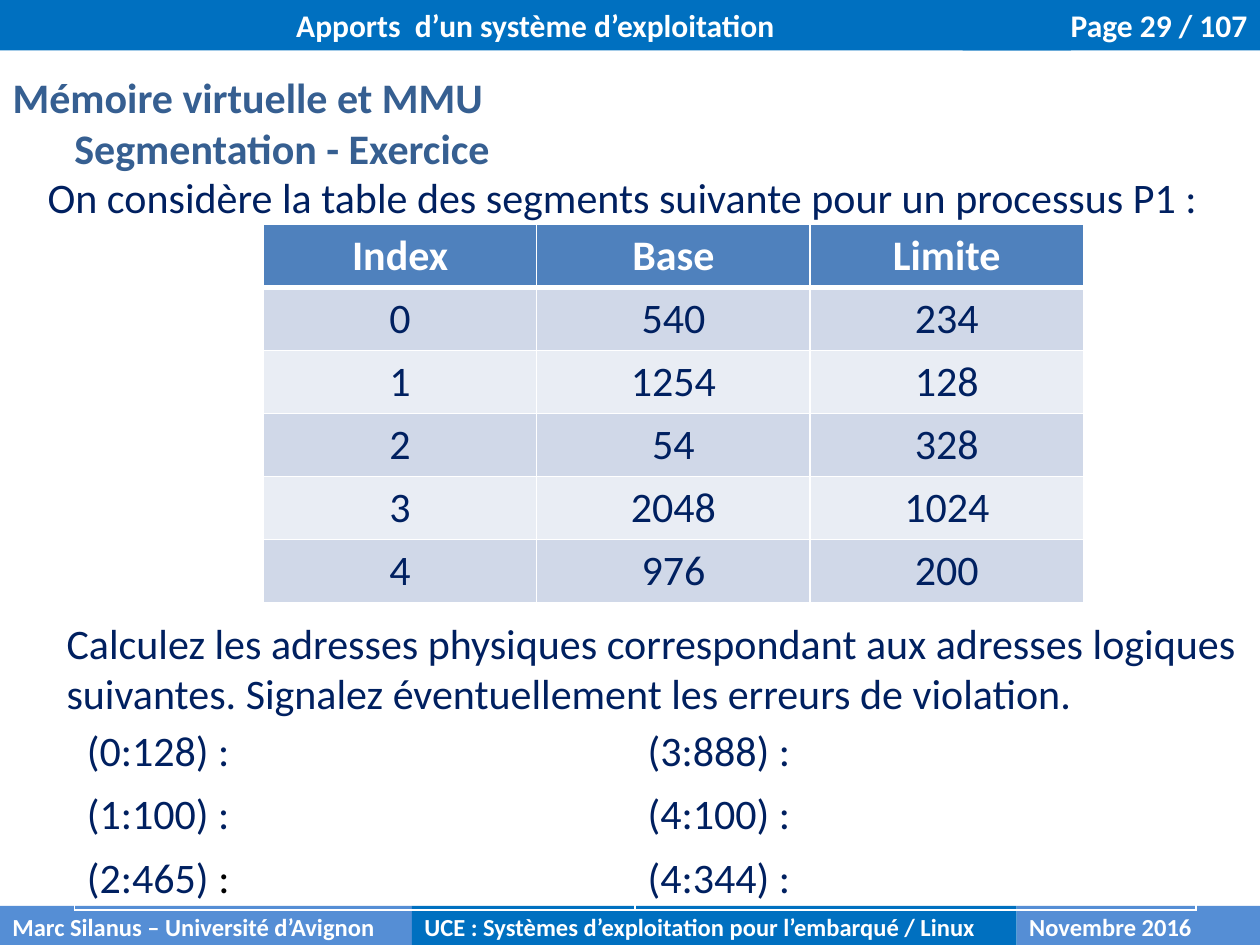
from dataclasses import dataclass

from lxml import etree
from pptx import Presentation
from pptx.dml.color import RGBColor
from pptx.enum import shapes, text
from pptx.oxml import ns
from pptx.util import Inches, Pt

WHITE = RGBColor(0xFF, 0xFF, 0xFF)
BLACK = RGBColor(0x00, 0x00, 0x00)
NAVY = RGBColor(0x00, 0x20, 0x60)
TITLE_BLUE = RGBColor(0x36, 0x5F, 0x91)
BAND_BLUE = RGBColor(0x00, 0x70, 0xC0)
BAND_LIGHT = RGBColor(0x55, 0x8E, 0xD5)
HEADER_BLUE = RGBColor(0x4F, 0x81, 0xBD)
ROW_FILLS = (RGBColor(0xD0, 0xD8, 0xE8), RGBColor(0xE9, 0xED, 0xF4))

LEFT, CENTER, RIGHT = text.PP_ALIGN.LEFT, text.PP_ALIGN.CENTER, text.PP_ALIGN.RIGHT
ROW_HEIGHT = 0.5


@dataclass(frozen=True)
class Box:
    left: float
    top: float
    width: float
    height: float

    def lengths(self) -> tuple:
        return tuple(Inches(v) for v in (self.left, self.top, self.width, self.height))


@dataclass(frozen=True)
class Band:
    wording: str
    box: Box
    fill: RGBColor
    size: int
    align: text.PP_ALIGN = LEFT


@dataclass(frozen=True)
class Statement:
    wording: str
    box: Box


BANDS = (
    Band("Page 29 / 107", Box(7.64, 0, 2.36, 0.4), BAND_BLUE, 18, RIGHT),
    Band("Apports  d’un système d’exploitation", Box(0, 0, 8.5, 0.4), BAND_BLUE, 18, CENTER),
    Band("Marc Silanus – Université d’Avignon", Box(0, 7.19, 3.27, 0.34), BAND_LIGHT, 14),
    Band("UCE : Systèmes d’exploitation pour l’embarqué / Linux",
         Box(3.27, 7.19, 4.8, 0.34), BAND_BLUE, 14),
    Band("Novembre 2016", Box(8.07, 7.19, 1.93, 0.34), BAND_LIGHT, 14),
)
STATEMENTS = (
    Statement("On considère la table des segments suivante pour un processus P1 :",
              Box(0.28, 1.31, 9.49, 0.5)),
    Statement("Calculez les adresses physiques correspondant aux adresses logiques "
              "suivantes. Signalez éventuellement les erreurs de violation.",
              Box(0.43, 4.85, 9.57, 0.91)),
)
SEGMENTS = (
    ("Index", "Base", "Limite"),
    ("0", "540", "234"),
    ("1", "1254", "128"),
    ("2", "54", "328"),
    ("3", "2048", "1024"),
    ("4", "976", "200"),
)
ADDRESSES = (
    ("(0:128) :", "(3:888) :"),
    ("(1:100) :", "(4:100) :"),
    ("(2:465)", "(4:344) :"),
)


def style_run(run, size: int, color: RGBColor, bold: bool = False) -> None:
    run.font.name = "Calibri"
    run.font.size = Pt(size)
    run.font.bold = bold
    run.font.color.rgb = color


def write(frame, wording: str, size: int, color: RGBColor,
          bold: bool = False, align: text.PP_ALIGN = LEFT) -> None:
    frame.text = wording
    frame.word_wrap = True
    for paragraph in frame.paragraphs:
        paragraph.alignment = align
        for run in paragraph.runs:
            style_run(run, size, color, bold)


def draw_title(slide) -> None:
    title = slide.shapes.title
    title.left, title.top, title.width, title.height = Box(0, 0.52, 9.53, 0.91).lengths()
    frame = title.text_frame
    write(frame, "Mémoire virtuelle et MMU\nSegmentation - Exercice", 24, TITLE_BLUE, True)
    frame.auto_size = text.MSO_AUTO_SIZE.NONE
    frame.vertical_anchor = text.MSO_ANCHOR.TOP
    properties = frame.paragraphs[1]._p.get_or_add_pPr()
    properties.set("marL", str(Inches(0.49)))
    properties.set("indent", "0")


def draw_band(slide, band: Band) -> None:
    shape = slide.shapes.add_shape(shapes.MSO_SHAPE.RECTANGLE, *band.box.lengths())
    shape.shadow.inherit = False
    shape.fill.solid()
    shape.fill.fore_color.rgb = band.fill
    shape.line.fill.background()
    shape.text_frame.vertical_anchor = text.MSO_ANCHOR.TOP
    write(shape.text_frame, band.wording, band.size, WHITE, True, band.align)


def draw_statement(slide, statement: Statement) -> None:
    box = slide.shapes.add_textbox(*statement.box.lengths())
    write(box.text_frame, statement.wording, 24, NAVY)


def add_grid(slide, rows: tuple, left: float, top: float, width: float):
    box = Box(left, top, width, ROW_HEIGHT * len(rows))
    return slide.shapes.add_table(len(rows), len(rows[0]), *box.lengths()).table


def add_borders(cell, top: int, bottom: int) -> None:
    properties = cell._tc.get_or_add_tcPr()
    for side, points in (("L", 1), ("R", 1), ("T", top), ("B", bottom)):
        line = etree.SubElement(properties, ns.qn(f"a:ln{side}"), w=str(Pt(points)))
        fill = etree.SubElement(line, ns.qn("a:solidFill"))
        etree.SubElement(fill, ns.qn("a:srgbClr"), val=str(WHITE))


def draw_segments(slide) -> None:
    table = add_grid(slide, SEGMENTS, 2.09, 1.78, 6.51)
    for r, row in enumerate(SEGMENTS):
        header = r == 0
        for c, value in enumerate(row):
            cell = table.cell(r, c)
            add_borders(cell, 3 if r == 1 else 1, 3 if header else 1)
            cell.fill.solid()
            cell.fill.fore_color.rgb = HEADER_BLUE if header else ROW_FILLS[(r - 1) % 2]
            write(cell.text_frame, value, 24, WHITE if header else NAVY, header, CENTER)


def draw_addresses(slide) -> None:
    table = add_grid(slide, ADDRESSES, 0.59, 5.72, 8.9)
    table.first_row = False
    table.horz_banding = False
    for r, row in enumerate(ADDRESSES):
        for c, address in enumerate(row):
            cell = table.cell(r, c)
            cell.fill.background()
            write(cell.text_frame, address, 24, NAVY)
    colon = table.cell(2, 0).text_frame.paragraphs[0].add_run()
    colon.text = " :"
    style_run(colon, 24, BLACK)


def main() -> None:
    presentation = Presentation()
    presentation.slide_width = Inches(10)
    presentation.slide_height = Inches(7.5)
    slide = presentation.slides.add_slide(presentation.slide_layouts[5])
    draw_title(slide)
    for band in BANDS:
        draw_band(slide, band)
    for statement in STATEMENTS:
        draw_statement(slide, statement)
    draw_segments(slide)
    draw_addresses(slide)
    presentation.save("out.pptx")


if __name__ == "__main__":
    main()
